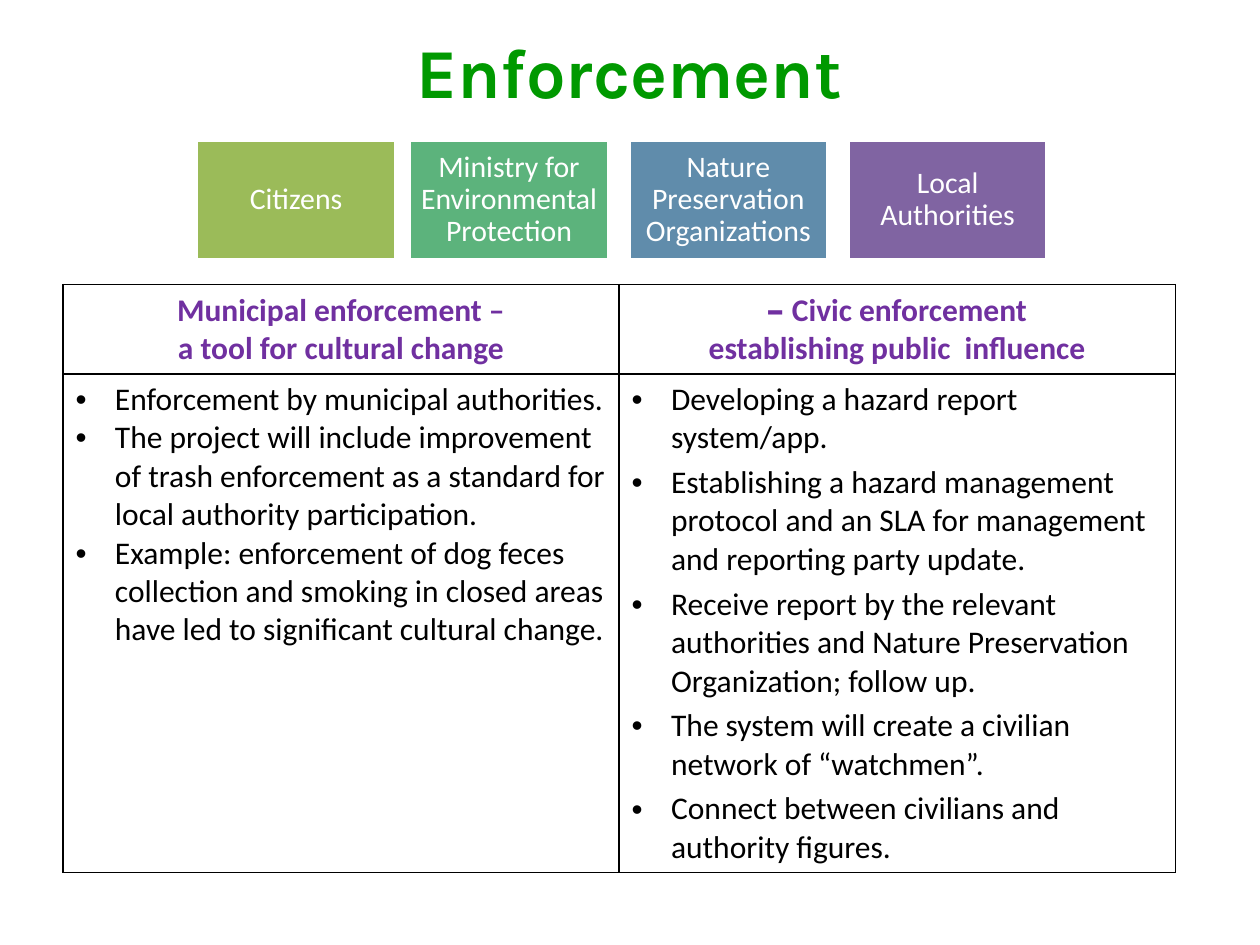
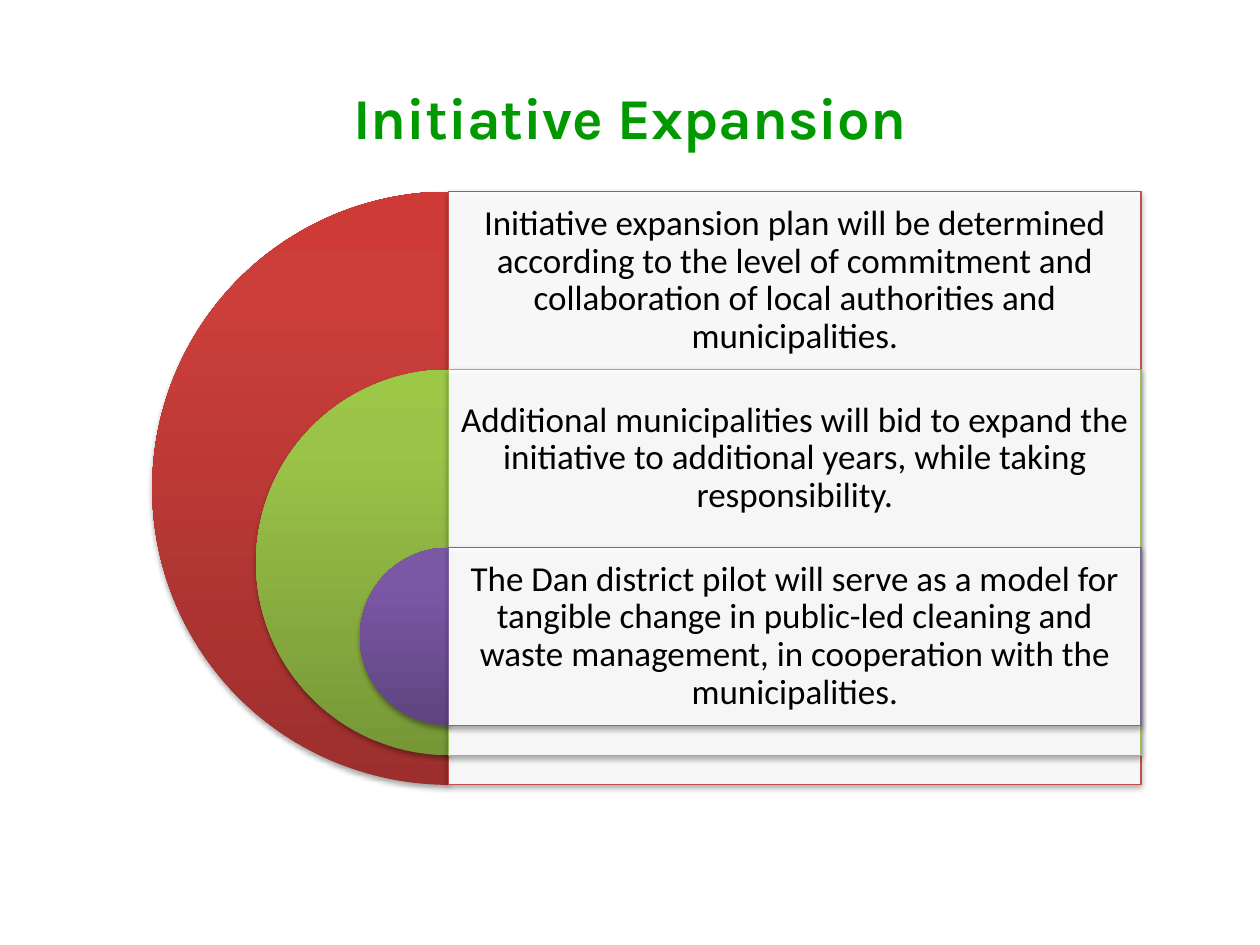
import dataclasses

import lxml.etree
import pptx
import pptx.dml.color
import pptx.enum.shapes
import pptx.enum.text
import pptx.oxml.ns
import pptx.util

Pt = pptx.util.Pt
Shapes = pptx.enum.shapes.MSO_SHAPE


@dataclasses.dataclass(frozen=True)
class Theme:
    """Colours, fonts and type sizes shared by the slides."""
    title_font: str = "Karla"
    body_font: str = "Calibri"
    title: str = "009900"
    heading: str = "7030A0"
    black: str = "000000"
    white: str = "FFFFFF"
    partner_size: float = 17
    table_size: float = 18
    panel_size: float = 20


THEME = Theme()

PARTNERS = [
    (112.3, "9BBB59", "Citizens"),
    (234, "5CB37C", "Ministry for Environmental Protection"),
    (359.3, "608CAB", "Nature Preservation Organizations"),
    (484.6, "8064A2", "Local Authorities"),
]
MUNICIPAL_POINTS = [
    "Enforcement by municipal authorities.",
    "The project will include improvement of trash enforcement as a standard for "
    "local authority participation.",
    "Example: enforcement of dog feces collection and smoking in closed areas have "
    "led to significant cultural change.",
]
CIVIC_POINTS = [
    "Developing a hazard report system/app.",
    "Establishing a hazard management protocol and an SLA for management and "
    "reporting party update.",
    "Receive report by the relevant authorities and Nature Preservation "
    "Organization; follow up.",
    "The system will create a civilian network of “watchmen”.",
    "Connect between civilians and authority figures.",
]
STAGES = [
    ("C0504D", ("9C2F2D", "CB3E3A", "CE3B37"),
     "Initiative expansion plan will be determined according to the level of "
     "commitment and collaboration of local authorities and municipalities."),
    ("9BBB59", ("779737", "9BC348", "9DC746"),
     "Additional municipalities will bid to expand the initiative to additional "
     "years, while taking responsibility."),
    ("8064A2", ("5F4480", "7B58A6", "7C57A8"),
     "The Dan district pilot will serve as a model for tangible change in public-led "
     "cleaning and waste management, in cooperation with the municipalities."),
]


def rgb(color):
    """Return a colour object for a hex string."""
    return pptx.dml.color.RGBColor.from_string(color)


def add_xml(parent, tag, **attributes):
    """Append a DrawingML element to a parent and return it."""
    return lxml.etree.SubElement(parent, pptx.oxml.ns.qn(f"a:{tag}"), attributes)


def style_font(paragraph, size, color, bold=False, name=THEME.body_font):
    """Set the font of a paragraph."""
    font = paragraph.font
    font.name, font.size, font.bold = name, Pt(size), bold
    font.color.rgb = rgb(color)


def write_centered(frame, text, size, color, inset, line_spacing=1.0, **font):
    """Write one centred paragraph in the middle of a text frame."""
    frame.word_wrap = True
    frame.vertical_anchor = pptx.enum.text.MSO_ANCHOR.MIDDLE
    frame.margin_left = frame.margin_right = Pt(inset)
    frame.margin_top = frame.margin_bottom = Pt(inset)
    paragraph = frame.paragraphs[0]
    paragraph.text = text
    paragraph.alignment = pptx.enum.text.PP_ALIGN.CENTER
    paragraph.line_spacing = line_spacing
    style_font(paragraph, size, color, **font)


def add_text(slide, box, text, size, color, inset, **options):
    """Add a text box with centred text."""
    textbox = slide.shapes.add_textbox(*map(Pt, box))
    write_centered(textbox.text_frame, text, size, color, inset, **options)


def add_title(slide, text, box, size):
    """Add the slide title."""
    add_text(slide, box, text, size, THEME.title, 4, bold=True, name=THEME.title_font)


def add_shape(slide, kind, box):
    """Add a preset shape without a shadow."""
    shape = slide.shapes.add_shape(kind, *map(Pt, box))
    shape.shadow.inherit = False
    return shape


def set_solid(shape, fill, line, line_width):
    """Give a shape a solid fill and an outline."""
    shape.fill.solid()
    shape.fill.fore_color.rgb = rgb(fill)
    shape.line.color.rgb = rgb(line)
    shape.line.width = Pt(line_width)


def add_drop_shadow(shape):
    """Add a soft shadow below a shape."""
    effects = shape._element.spPr.find(pptx.oxml.ns.qn("a:effectLst"))
    shadow = add_xml(effects, "outerShdw", blurRad=str(Pt(3.1)), dist=str(Pt(1.8)),
                     dir="5400000", rotWithShape="0")
    add_xml(add_xml(shadow, "srgbClr", val=THEME.black), "alpha", val="35000")


def add_partner(slide, left, color, text):
    """Add a coloured partner tile."""
    tile = add_shape(slide, Shapes.RECTANGLE, (left, 80, 113.8, 68.4))
    set_solid(tile, color, THEME.white, 2)
    write_centered(tile.text_frame, text, THEME.partner_size, THEME.white, 5,
                   line_spacing=0.9)


def add_half_disc(slide, box, colors):
    """Add the left half of a disc with a vertical gradient."""
    disc = add_shape(slide, Shapes.PIE, box)
    disc.adjustments[0], disc.adjustments[1] = 54, 162
    disc.fill.gradient()
    disc.fill.gradient_angle = 90
    stops = disc._element.spPr.find(".//" + pptx.oxml.ns.qn("a:gsLst"))
    for stop in list(stops):
        stops.remove(stop)
    for position, color in zip((0, 80, 100), colors):
        add_xml(add_xml(stops, "gs", pos=str(position * 1000)), "srgbClr", val=color)
    disc.line.fill.background()
    add_drop_shadow(disc)


def add_panel(slide, box, line):
    """Add a slightly transparent white panel."""
    panel = add_shape(slide, Shapes.RECTANGLE, box)
    set_solid(panel, THEME.white, line, 0.75)
    color = panel._element.spPr.find(
        pptx.oxml.ns.qn("a:solidFill") + "/" + pptx.oxml.ns.qn("a:srgbClr"))
    add_xml(color, "alpha", val="90000")
    add_drop_shadow(panel)


def style_cell(cell):
    """Clear the fill of a cell and draw its borders."""
    properties = cell._tc.get_or_add_tcPr()
    for side in ("lnL", "lnR", "lnT", "lnB"):
        border = add_xml(properties, side, w=str(Pt(1)))
        add_xml(add_xml(border, "solidFill"), "srgbClr", val=THEME.black)
    cell.fill.background()


def cell_paragraphs(cell, texts):
    """Fill a cell with one paragraph per text and yield the paragraphs."""
    frame = cell.text_frame
    for index, text in enumerate(texts):
        paragraph = frame.add_paragraph() if index else frame.paragraphs[0]
        paragraph.text = text
        yield paragraph


def fill_heading(cell, texts, right_to_left=False):
    """Write a centred heading in a cell."""
    for paragraph in cell_paragraphs(cell, texts):
        paragraph.alignment = pptx.enum.text.PP_ALIGN.CENTER
        if right_to_left:
            paragraph._p.get_or_add_pPr().set("rtl", "1")
        style_font(paragraph, THEME.table_size, THEME.heading, bold=True)


def fill_bullets(cell, texts, gap):
    """Write a bulleted list in a cell."""
    for index, paragraph in enumerate(cell_paragraphs(cell, texts)):
        properties = paragraph._p.get_or_add_pPr()
        properties.set("marL", str(Pt(22.5)))
        properties.set("indent", str(-Pt(22.5)))
        add_xml(properties, "buFont", typeface="Arial")
        add_xml(properties, "buChar", char="•")
        if index and gap:
            paragraph.space_before = Pt(gap)
        style_font(paragraph, THEME.table_size, THEME.black)


def add_enforcement_table(slide):
    """Add the table that compares municipal and civic enforcement."""
    frame = slide.shapes.add_table(2, 2, Pt(36), Pt(162.7), Pt(635.6), Pt(336))
    table = frame.table
    table.first_row = table.horz_banding = False
    for row, height in zip(table.rows, (51, 285)):
        row.height = Pt(height)
    for cell in table.iter_cells():
        style_cell(cell)
    fill_heading(table.cell(0, 0), ["Municipal enforcement –\na tool for cultural change"])
    fill_heading(table.cell(0, 1),
                 ["Civic enforcement –", "establishing public  influence"],
                 right_to_left=True)
    fill_bullets(table.cell(1, 0), MUNICIPAL_POINTS, 0)
    fill_bullets(table.cell(1, 1), CIVIC_POINTS, 3.6)


def add_stages(slide):
    """Add nested half discs, each with a text panel."""
    center, top, panel_width = 256.5, 109.5, 395.5
    row_height, diameter_step = 101.7, 118.65
    for index, (line, colors, text) in enumerate(STAGES):
        diameter = row_height + diameter_step * (len(STAGES) - 1 - index)
        row_top = top + row_height * index
        add_half_disc(slide, (center - diameter / 2, row_top, diameter, diameter), colors)
        add_panel(slide, (center, row_top, panel_width, diameter), line)
        add_text(slide, (center, row_top, panel_width, row_height), text,
                 THEME.panel_size, THEME.black, 6, line_spacing=0.9)


def main():
    """Build and save the presentation."""
    presentation = pptx.Presentation()
    presentation.slide_width, presentation.slide_height = Pt(720), Pt(540)
    blank = presentation.slide_layouts[6]

    enforcement = presentation.slides.add_slide(blank)
    add_title(enforcement, "Enforcement", (35.5, 8, 648, 64.8), 40)
    for partner in PARTNERS:
        add_partner(enforcement, *partner)
    add_enforcement_table(enforcement)

    expansion = presentation.slides.add_slide(blank)
    add_title(expansion, "Initiative Expansion", (36, 21.6, 648, 90), 33)
    add_stages(expansion)

    presentation.save("out.pptx")


if __name__ == "__main__":
    main()
